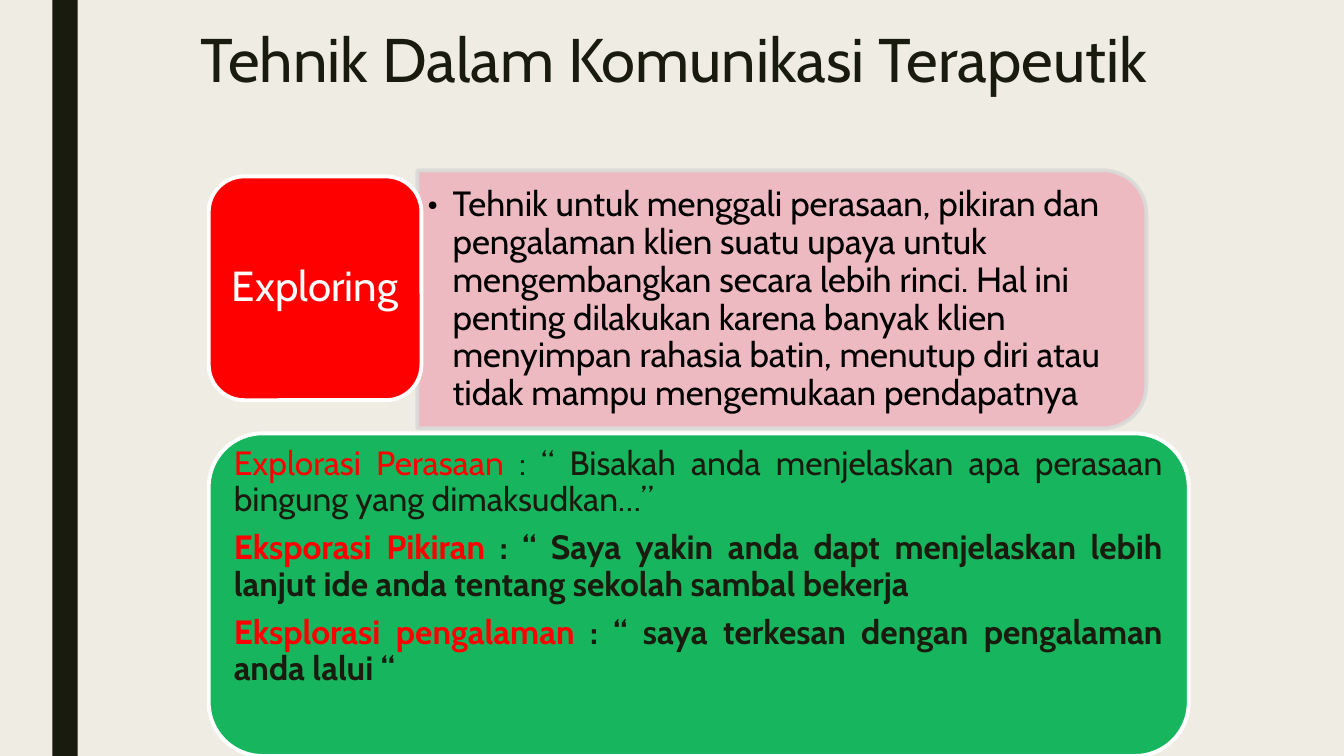
import math

import lxml.etree
import pptx
import pptx.dml.color
import pptx.enum.shapes
import pptx.enum.text
import pptx.oxml.ns
import pptx.util

Inches = pptx.util.Inches
Pt = pptx.util.Pt
ALIGN = pptx.enum.text.PP_ALIGN
ANCHOR = pptx.enum.text.MSO_ANCHOR
SHAPE = pptx.enum.shapes.MSO_SHAPE
qn = pptx.oxml.ns.qn
INK = "191B0E"
RED = "FF0000"
WHITE = "FFFFFF"


def color(hex_value):
    return pptx.dml.color.RGBColor.from_string(hex_value)


def style_paragraph(paragraph, size, hex_value, alignment, spacing=0.9):
    paragraph.alignment = alignment
    paragraph.line_spacing = spacing
    paragraph.font.name = "Cabin"
    paragraph.font.size = Pt(size)
    paragraph.font.color.rgb = color(hex_value)


presentation = pptx.Presentation()
presentation.slide_width = Inches(13.33)
presentation.slide_height = Inches(7.5)
slide = presentation.slides.add_slide(presentation.slide_layouts[5])
slide.background.fill.solid()
slide.background.fill.fore_color.rgb = color("EFEDE3")

title = slide.shapes.title
title.left, title.top = Inches(1.55), Inches(0.25)
title.width, title.height = Inches(10.27), Inches(1.32)
title.text_frame.text = "Tehnik Dalam Komunikasi Terapeutik"
title.text_frame.vertical_anchor = ANCHOR.TOP
title.text_frame.auto_size = pptx.enum.text.MSO_AUTO_SIZE.NONE
style_paragraph(title.text_frame.paragraphs[0], 44, INK, ALIGN.CENTER, 0.89)

side_bar = slide.shapes.add_shape(SHAPE.RECTANGLE, Inches(0.52), 0, Inches(0.25), Inches(7.5))

left, top, right, bottom, radius = 4.14, 1.69, 11.37, 4.25, 0.43
outline = [(right, top + radius)]
for center_y, start in [(bottom - radius, 0), (top + radius, -90)]:
    arc = [
        (right - radius + radius * math.cos(math.radians(angle)),
         center_y + radius * math.sin(math.radians(angle)))
        for angle in range(start, start + 91, 5)
    ]
    if start == 0:
        outline = arc + [(left, bottom), (left, top)]
    else:
        outline += arc
builder = slide.shapes.build_freeform(*[Inches(value) for value in outline[0]], scale=1.0)
builder.add_line_segments([(Inches(x), Inches(y)) for x, y in outline[1:]], close=True)
definition_panel = builder.convert_to_shape()

technique_panel = slide.shapes.add_shape(
    SHAPE.ROUNDED_RECTANGLE, Inches(2.07), Inches(1.75), Inches(2.11), Inches(2.22))
examples_panel = slide.shapes.add_shape(
    SHAPE.ROUNDED_RECTANGLE, Inches(2.07), Inches(4.3), Inches(9.72), Inches(3.2))

for shape, fill, line, fill_alpha, line_alpha in [
    (side_bar, INK, None, 100, 100),
    (definition_panel, "EEB5BF", "DADBD9", 90, 90),
    (technique_panel, RED, WHITE, 100, 100),
    (examples_panel, "00B050", WHITE, 90, 100),
]:
    shape.shadow.inherit = False
    shape.fill.solid()
    shape.fill.fore_color.rgb = color(fill)
    if line:
        shape.line.color.rgb = color(line)
        shape.line.width = Pt(2.75)
    else:
        shape.line.fill.background()
    properties = shape.fill._xPr
    for parent, alpha in [(properties, fill_alpha), (properties.find(qn("a:ln")), line_alpha)]:
        if alpha < 100:
            rgb = parent.find(qn("a:solidFill")).find(qn("a:srgbClr"))
            lxml.etree.SubElement(rgb, qn("a:alpha"), val=str(alpha * 1000))

technique = technique_panel.text_frame
technique.margin_left = technique.margin_right = 0
technique.vertical_anchor = ANCHOR.MIDDLE
technique.text = "Exploring"
style_paragraph(technique.paragraphs[0], 30, WHITE, ALIGN.CENTER)

definition = slide.shapes.add_textbox(Inches(4.14), Inches(1.82), Inches(7.11), Inches(2.31)).text_frame
definition.word_wrap = True
definition.vertical_anchor = ANCHOR.MIDDLE
definition.text = (
    "Tehnik untuk menggali perasaan, pikiran dan pengalaman klien suatu upaya untuk "
    "mengembangkan secara lebih rinci. Hal ini penting dilakukan karena banyak klien "
    "menyimpan rahasia batin, menutup diri atau tidak mampu mengemukaan pendapatnya"
)
paragraph = definition.paragraphs[0]
style_paragraph(paragraph, 25, "000000", ALIGN.LEFT)
paragraph_properties = paragraph._p.get_or_add_pPr()
paragraph_properties.set("marL", str(Inches(0.25)))
paragraph_properties.set("indent", str(-Inches(0.25)))
for tag, attributes in [("a:buFont", {"typeface": "Cabin"}), ("a:buChar", {"char": "•"})]:
    bullet = lxml.etree.Element(qn(tag), attributes)
    paragraph_properties.find(qn("a:defRPr")).addprevious(bullet)

examples = slide.shapes.add_textbox(Inches(2.22), Inches(4.43), Inches(9.41), Inches(2.89)).text_frame
examples.word_wrap = True
examples.margin_top = 0
for index, (label, quote, bold) in enumerate([
    ("Explorasi Perasaan", " : “ Bisakah anda menjelaskan apa perasaan bingung yang dimaksudkan…”", False),
    ("Eksporasi Pikiran", " : “ Saya yakin anda dapt menjelaskan lebih lanjut ide anda tentang sekolah sambal bekerja", True),
    ("Eksplorasi pengalaman", " : “ saya terkesan dengan pengalaman anda lalui “", True),
]):
    paragraph = examples.add_paragraph() if index else examples.paragraphs[0]
    style_paragraph(paragraph, 24, INK, ALIGN.JUSTIFY)
    paragraph.space_after = Pt(8.4)
    paragraph.font.bold = bold
    label_run = paragraph.add_run()
    label_run.text = label
    label_run.font.color.rgb = color(RED)
    paragraph.add_run().text = quote

presentation.save("out.pptx")
